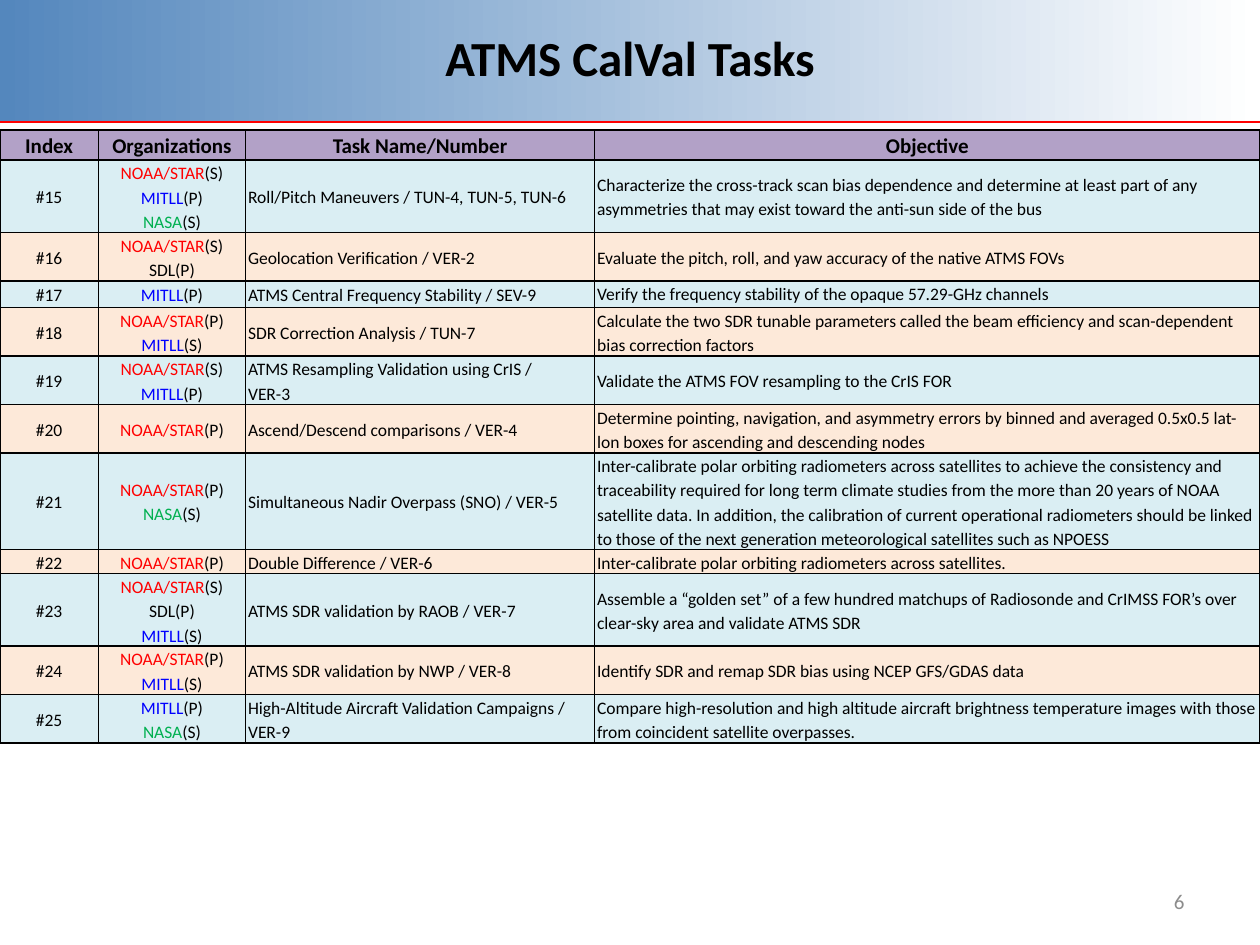
from lxml import etree
from pptx import Presentation
from pptx.dml.color import RGBColor
from pptx.enum.shapes import MSO_CONNECTOR, MSO_SHAPE
from pptx.enum.text import MSO_ANCHOR, PP_ALIGN
from pptx.oxml.ns import qn
from pptx.util import Inches, Pt

LEFT, CENTER, RIGHT = PP_ALIGN.LEFT, PP_ALIGN.CENTER, PP_ALIGN.RIGHT
TOP, MIDDLE = MSO_ANCHOR.TOP, MSO_ANCHOR.MIDDLE
FONT = "Calibri"
COLORS = {
    "banner": "5487BD", "white": "FFFFFF", "rule": "FF0000", "text": "000000",
    "number": "8C8C8C", "header": "B2A1C7", "odd": "DAEEF3", "even": "FDE9D9",
    "NOAA/STAR": "FF0000", "MITLL": "0000FF", "NASA": "00B050",
}
COLUMN_WIDTHS = [0.78, 1.17, 2.77, 5.28]
HEADER_HEIGHT = 0.24
LINE_HEIGHT = 0.19
HEADERS = ["Index", "Organizations", "Task Name/Number", "Objective"]
FIRST_INDEX = 15
# Organizations, task, objective, lines of text in the row, objective anchor
TASKS = [
    ("NOAA/STAR(S)\nMITLL(P)\nNASA(S)", "Roll/Pitch Maneuvers / TUN-4, TUN-5, TUN-6",
     "Characterize the cross-track scan bias dependence and determine at least part of any "
     "asymmetries that may exist toward the anti-sun side of the bus", 3, MIDDLE),
    ("NOAA/STAR(S)\nSDL(P)", "Geolocation Verification / VER-2",
     "Evaluate the pitch, roll, and yaw accuracy of the native ATMS FOVs", 2, MIDDLE),
    ("MITLL(P)", "ATMS Central Frequency Stability / SEV-9",
     "Verify the frequency stability of the opaque 57.29-GHz channels", 1.12, TOP),
    ("NOAA/STAR(P)\nMITLL(S)", "SDR Correction Analysis / TUN-7",
     "Calculate the two SDR tunable parameters called the beam efficiency and "
     "scan-dependent bias correction factors", 2, MIDDLE),
    ("NOAA/STAR(S)\nMITLL(P)", "ATMS Resampling Validation using CrIS /\nVER-3",
     "Validate the ATMS FOV resampling to the CrIS FOR", 2, MIDDLE),
    ("NOAA/STAR(P)", "Ascend/Descend comparisons / VER-4",
     "Determine pointing, navigation, and asymmetry errors by binned and averaged 0.5x0.5 "
     "lat-lon boxes for ascending and descending nodes", 2, MIDDLE),
    ("NOAA/STAR(P)\nNASA(S)", "Simultaneous Nadir Overpass (SNO) / VER-5",
     "Inter-calibrate polar orbiting radiometers across satellites to achieve the consistency "
     "and traceability required for long term climate studies from the more than 20 years of "
     "NOAA satellite data. In addition, the calibration of current operational radiometers "
     "should be linked to those of the next generation meteorological satellites such as "
     "NPOESS", 4, MIDDLE),
    ("NOAA/STAR(P)", "Double Difference / VER-6",
     "Inter-calibrate polar orbiting radiometers across satellites.", 1, MIDDLE),
    ("NOAA/STAR(S)\nSDL(P)\nMITLL(S)", "ATMS SDR validation by RAOB / VER-7",
     "Assemble a “golden set” of a few hundred matchups of Radiosonde and CrIMSS FOR’s over "
     "clear-sky area and validate ATMS SDR", 3, MIDDLE),
    ("NOAA/STAR(P)\nMITLL(S)", "ATMS SDR validation by NWP / VER-8",
     "Identify SDR and remap SDR bias using NCEP GFS/GDAS data", 2, MIDDLE),
    ("MITLL(P)\nNASA(S)", "High-Altitude Aircraft Validation Campaigns / VER-9",
     "Compare high-resolution and high altitude aircraft brightness temperature images with "
     "those from coincident satellite overpasses.", 2, TOP),
]


def rgb(name):
    return RGBColor.from_string(COLORS[name])


def style_paragraph(p, size, align, color="text", bold=False):
    p.alignment = align
    p.font.name = FONT
    p.font.size = Pt(size)
    p.font.bold = bold
    p.font.color.rgb = rgb(color)


def add_text(s, box, text, size, align, color="text", bold=False):
    tf = s.shapes.add_textbox(*map(Inches, box)).text_frame
    tf.word_wrap = True
    tf.vertical_anchor = MIDDLE
    tf.text = text
    style_paragraph(tf.paragraphs[0], size, align, color, bold)


def add_banner(s, left, top, width, height):
    band = s.shapes.add_shape(MSO_SHAPE.RECTANGLE,
                              *map(Inches, (left, top, width, height)))
    band.shadow.inherit = False
    band.line.fill.background()
    band.fill.gradient()
    band.fill.gradient_angle = 0
    for stop, position, color in zip(band.fill.gradient_stops, (0, 1), ("banner", "white")):
        stop.position = position
        stop.color.rgb = rgb(color)

    bottom = Inches(top + height)
    rule = s.shapes.add_connector(MSO_CONNECTOR.STRAIGHT, Inches(left), bottom,
                                  Inches(left + width), bottom)
    rule.line.color.rgb = rgb("rule")
    rule.line.width = Pt(1.25)
    etree.SubElement(rule._element.spPr, qn("a:effectLst"))
    add_text(s, (left + 0.5, top, width - 1, 0.92), "ATMS CalVal Tasks", 28, CENTER, bold=True)


def add_borders(cell):
    tc_pr = cell._tc.get_or_add_tcPr()
    for side in ("a:lnL", "a:lnR", "a:lnT", "a:lnB"):
        ln = etree.SubElement(tc_pr, qn(side), w=str(Pt(1)))
        fill = etree.SubElement(ln, qn("a:solidFill"))
        etree.SubElement(fill, qn("a:srgbClr"), val=COLORS["text"])


def add_line_runs(p, line):
    """Colour the organization's name, but not the role after it."""
    name, bracket, role = line.partition("(")
    if name in COLORS:
        r = p.add_run()
        r.text = name
        r.font.color.rgb = rgb(name)
        line = bracket + role
    p.add_run().text = line


def fill_cell(cell, text, color, size, align, anchor=MIDDLE, bold=False):
    add_borders(cell)
    cell.fill.solid()
    cell.fill.fore_color.rgb = rgb(color)
    cell.margin_left = cell.margin_right = Inches(0.02)
    cell.margin_top = cell.margin_bottom = 0
    cell.vertical_anchor = anchor
    tf = cell.text_frame
    for i, line in enumerate(text.split("\n")):
        p = tf.add_paragraph() if i else tf.paragraphs[0]
        add_line_runs(p, line)
        p.line_spacing = 1.15
        style_paragraph(p, size, align, bold=bold)


def add_task_table(s, left, top):
    heights = [HEADER_HEIGHT] + [LINE_HEIGHT * task[3] for task in TASKS]
    box = (left, top, sum(COLUMN_WIDTHS), sum(heights))
    table = s.shapes.add_table(len(heights), len(HEADERS), *map(Inches, box)).table
    table.first_row = table.horz_banding = False
    for column, width in zip(table.columns, COLUMN_WIDTHS):
        column.width = Inches(width)
    for row, height in zip(table.rows, heights):
        row.height = Inches(height)

    for c, header in enumerate(HEADERS):
        fill_cell(table.cell(0, c), header, "header", 12, CENTER, bold=True)
    for r, (organizations, task, objective, _, anchor) in enumerate(TASKS, 1):
        color = "odd" if r % 2 else "even"
        index = f"#{FIRST_INDEX + r - 1}"
        fill_cell(table.cell(r, 0), index, color, 10, CENTER)
        fill_cell(table.cell(r, 1), organizations, color, 10, CENTER)
        fill_cell(table.cell(r, 2), task, color, 10, LEFT)
        fill_cell(table.cell(r, 3), objective, color, 10, LEFT, anchor)


def main():
    prs = Presentation()
    prs.slide_width, prs.slide_height = Inches(10), Inches(7.5)
    s = prs.slides.add_slide(prs.slide_layouts[6])
    add_banner(s, 0, -0.01, 10, 0.98)
    add_task_table(s, 0, 1.03)
    add_text(s, (7.17, 6.95, 2.33, 0.4), "6", 12, RIGHT, "number")
    prs.save("out.pptx")


if __name__ == "__main__":
    main()
